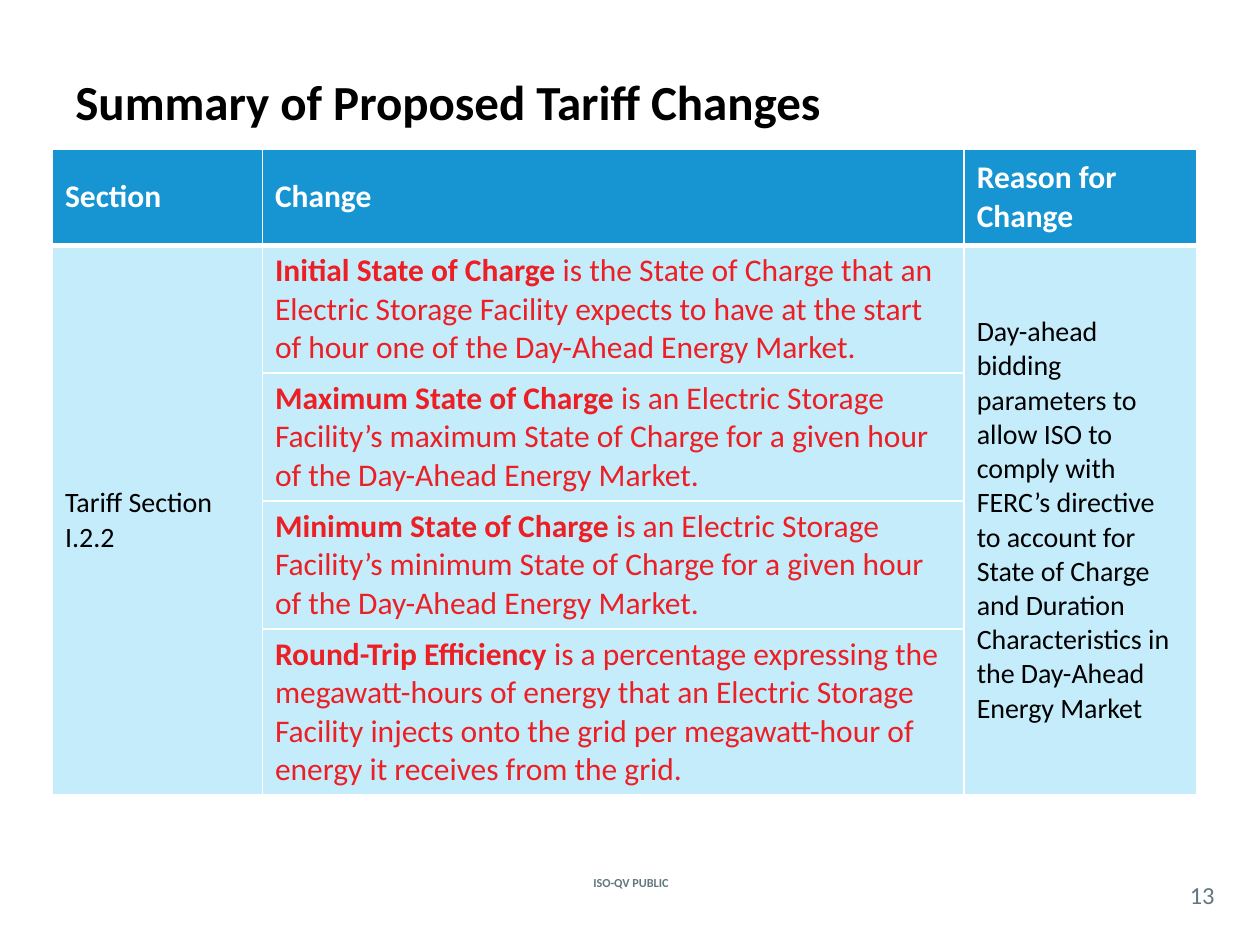
from dataclasses import dataclass

from lxml import etree
from pptx import Presentation
from pptx import util as u
from pptx.dml.color import RGBColor
from pptx.enum import text
from pptx.oxml import ns

FONT = "Calibri"
COLORS = {
    "black": "000000",
    "white": "FFFFFF",
    "header": "1795D2",
    "body": "C5ECFB",
    "red": "EC1F25",
    "gray": "62777F",
}


@dataclass
class Run:
    text: str
    size: float
    color: str
    bold: bool = False


@dataclass
class Label:
    left: float
    top: float
    width: float
    height: float
    run: Run
    align: text.PP_ALIGN = text.PP_ALIGN.CENTER
    margin: float = 0


def add_runs(p, runs: list[Run]) -> None:
    for run in runs:
        r = p.add_run()
        r.text = run.text
        r.font.name = FONT
        r.font.size = u.Pt(run.size)
        r.font.bold = run.bold
        r.font.color.rgb = RGBColor.from_string(COLORS[run.color])


def add_label(s, label: Label) -> None:
    box = (label.left, label.top, label.width, label.height)
    tf = s.shapes.add_textbox(*map(u.Pt, box)).text_frame
    tf.word_wrap = True
    tf.vertical_anchor = text.MSO_ANCHOR.MIDDLE
    tf.margin_left = tf.margin_right = u.Pt(label.margin)
    tf.margin_top = tf.margin_bottom = 0
    p = tf.paragraphs[0]
    p.alignment = label.align
    add_runs(p, [label.run])


def set_borders(cell, widths: dict[str, float]) -> None:
    """Draw white cell borders; widths maps L, R, T, B (in that order) to points."""
    tc_pr = cell._tc.get_or_add_tcPr()
    for i, (side, width) in enumerate(widths.items()):
        ln = etree.Element(ns.qn(f"a:ln{side}"), w=str(u.Pt(width)))
        fill = etree.SubElement(ln, ns.qn("a:solidFill"))
        etree.SubElement(fill, ns.qn("a:srgbClr"), val=COLORS["white"])
        tc_pr.insert(i, ln)


def fill_cell(cell, paragraphs: list[list[Run]]) -> None:
    tf = cell.text_frame
    for i, runs in enumerate(paragraphs):
        add_runs(tf.add_paragraph() if i else tf.paragraphs[0], runs)


LABELS = [
    Label(307.5, 498, 106, 12.5, Run("ISO-QV PUBLIC", 7, "gray", True)),
    Label(672, 501, 30, 21, Run("13", 14, "gray")),
    Label(36, 12.5, 648, 90, Run("Summary of Proposed Tariff Changes", 28, "black", True),
          text.PP_ALIGN.LEFT, 7.2),
]
HEADERS = ["Section", "Change", "Reason for Change"]
SECTION = ["Tariff Section", "I.2.2"]
REASON = ["Day-ahead bidding parameters to allow ISO to comply with FERC’s directive to account "
          "for State of Charge and Duration Characteristics in the Day-Ahead Energy Market"]
CHANGES = [
    ("Initial State of Charge",
     " is the State of Charge that an Electric Storage Facility expects to have at the start "
     "of hour one of the Day-Ahead Energy Market."),
    ("Maximum State of Charge",
     " is an Electric Storage Facility’s maximum State of Charge for a given hour of the "
     "Day-Ahead Energy Market."),
    ("Minimum State of Charge",
     " is an Electric Storage Facility’s minimum State of Charge for a given hour of the "
     "Day-Ahead Energy Market."),
    ("Round-Trip Efficiency",
     " is a percentage expressing the megawatt-hours of energy that an Electric Storage "
     "Facility injects onto the grid per megawatt-hour of energy it receives from the grid."),
]
COL_WIDTHS = [120, 401, 133]
ROW_HEIGHTS = [55.2, 73.1, 73.1, 73.1, 95]


def add_changes_table(s) -> None:
    table = s.shapes.add_table(
        len(ROW_HEIGHTS), len(COL_WIDTHS), u.Pt(30), u.Pt(85),
        u.Pt(sum(COL_WIDTHS)), u.Pt(sum(ROW_HEIGHTS))).table
    for col, width in zip(table.columns, COL_WIDTHS):
        col.width = u.Pt(width)
    for row, height in zip(table.rows, ROW_HEIGHTS):
        row.height = u.Pt(height)

    for i, row in enumerate(table.rows):
        for cell in row.cells:
            cell.fill.solid()
            cell.fill.fore_color.rgb = RGBColor.from_string(COLORS["body" if i else "header"])
            cell.vertical_anchor = text.MSO_ANCHOR.MIDDLE
            set_borders(cell, {"L": 1, "R": 1, "T": 3 if i == 1 else 1, "B": 1 if i else 3})

    for j, header in enumerate(HEADERS):
        fill_cell(table.cell(0, j), [[Run(header, 18, "white", True)]])
    for j, lines in ((0, SECTION), (2, REASON)):
        table.cell(1, j).merge(table.cell(len(CHANGES), j))
        fill_cell(table.cell(1, j), [[Run(line, 16, "black")] for line in lines])
    for i, (term, definition) in enumerate(CHANGES, 1):
        fill_cell(table.cell(i, 1), [[Run(term, 18, "red", True), Run(definition, 18, "red")]])


def main() -> None:
    prs = Presentation()
    prs.slide_width, prs.slide_height = u.Pt(720), u.Pt(540)
    s = prs.slides.add_slide(prs.slide_layouts[6])
    for label in LABELS:
        add_label(s, label)
    add_changes_table(s)
    prs.save("out.pptx")


if __name__ == "__main__":
    main()
